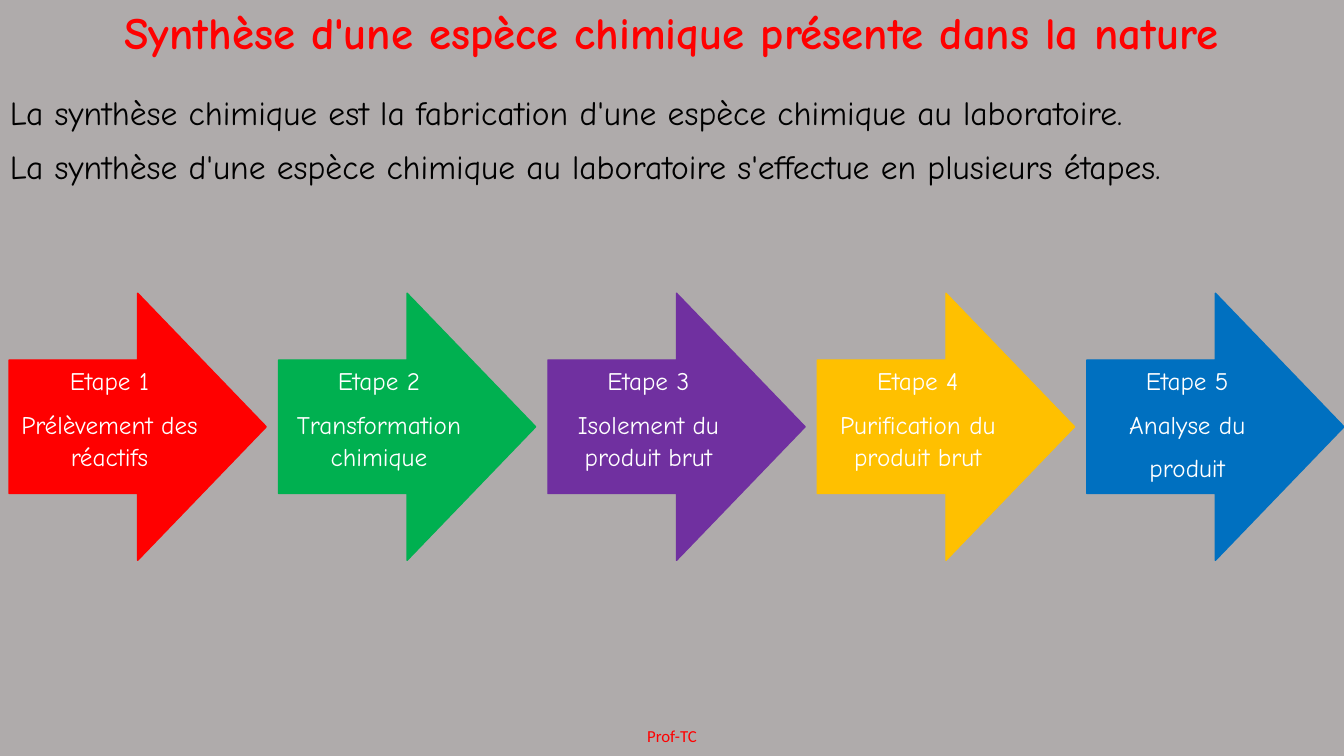
from pptx import Presentation
from pptx.dml.color import RGBColor as Rgb
from pptx.enum.shapes import MSO_SHAPE as Shape
from pptx.enum.text import MSO_ANCHOR as Anchor, MSO_AUTO_SIZE as Fit, PP_ALIGN as Align
from pptx.util import Cm, Pt

WIDE, HIGH = 33.87, 19.05
FONT = "Comic Neue"
RED, BLACK, WHITE, GREY = "FF0000", "000000", "FFFFFF", "AFABAB"
LEFT, PITCH = 0.23, 6.79
SPACED = {"line_spacing": 1.07, "space_after": Pt(8)}
STEPS = [
    (RED, ["Prélèvement des réactifs"]),
    ("00B050", ["Transformation chimique"]),
    ("7030A0", ["Isolement du produit brut"]),
    ("FFC000", ["Purification du produit brut"]),
    ("0070C0", ["Analyse du", "produit"]),
]


def paint(target, color):
    target.rgb = Rgb.from_string(color)


def apply(target, values):
    for name, value in values.items():
        setattr(target, name, value)


def place(shape, left, top, width, height):
    apply(shape, {"left": Cm(left), "top": Cm(top),
                  "width": Cm(width), "height": Cm(height)})


def write(shape, lines, color, font, para, frame=None):
    text = shape.text_frame
    apply(text, {"word_wrap": True, "auto_size": Fit.NONE,
                 "vertical_anchor": Anchor.TOP, **(frame or {})})
    text.text = "\n".join(lines)
    for line in text.paragraphs:
        apply(line, {"alignment": Align.CENTER, **para})
        for run in line.runs:
            apply(run.font, {"name": FONT, **font})
            paint(run.font.color, color)


def add_text(slide, box, *args):
    shape = slide.shapes.add_textbox(*map(Cm, box))
    write(shape, *args)


def add_arrow(slide, box, color):
    arrow = slide.shapes.add_shape(Shape.RIGHT_ARROW, *map(Cm, box))
    arrow.shadow.inherit = False
    arrow.fill.solid()
    paint(arrow.fill.fore_color, color)
    paint(arrow.line.color, color)
    arrow.line.width = Pt(1)


def add_step(slide, index, color, lines):
    left = LEFT + index * PITCH
    add_arrow(slide, (left, 7.39, 6.48, 6.73), color)
    edges = ("margin_left", "margin_top", "margin_right", "margin_bottom")
    add_text(slide, (left + 0.03, 9.16, 5, 3.33), [f"Etape {index + 1}", *lines],
             WHITE, {"size": Pt(18)}, SPACED, dict.fromkeys(edges, 0))


def main():
    deck = Presentation()
    apply(deck, {"slide_width": Cm(WIDE), "slide_height": Cm(HIGH)})
    slide = deck.slides.add_slide(deck.slide_layouts.get_by_name("Title Only"))
    back = slide.background.fill
    back.solid()
    paint(back.fore_color, GREY)

    title = slide.shapes.title
    place(title, 0, 0, WIDE, 1.62)
    write(title, ["Synthèse d'une espèce chimique présente dans la nature"],
          RED, {"size": Pt(32), "bold": True}, {})
    add_text(slide, (0, 2.11, WIDE, 2.7), [
        "La synthèse chimique est la fabrication d'une espèce chimique au laboratoire.",
        "La synthèse d'une espèce chimique au laboratoire s'effectue en plusieurs étapes.",
    ], BLACK, {"size": Pt(24)}, {**SPACED, "alignment": Align.JUSTIFY})
    for index, (color, lines) in enumerate(STEPS):
        add_step(slide, index, color, lines)
    add_text(slide, (0, 18.03, WIDE, 1.02), ["Prof-TC"], RED,
             {"name": "Calibri", "size": Pt(12)}, {},
             {"vertical_anchor": Anchor.MIDDLE})
    deck.save("out.pptx")


if __name__ == "__main__":
    main()
